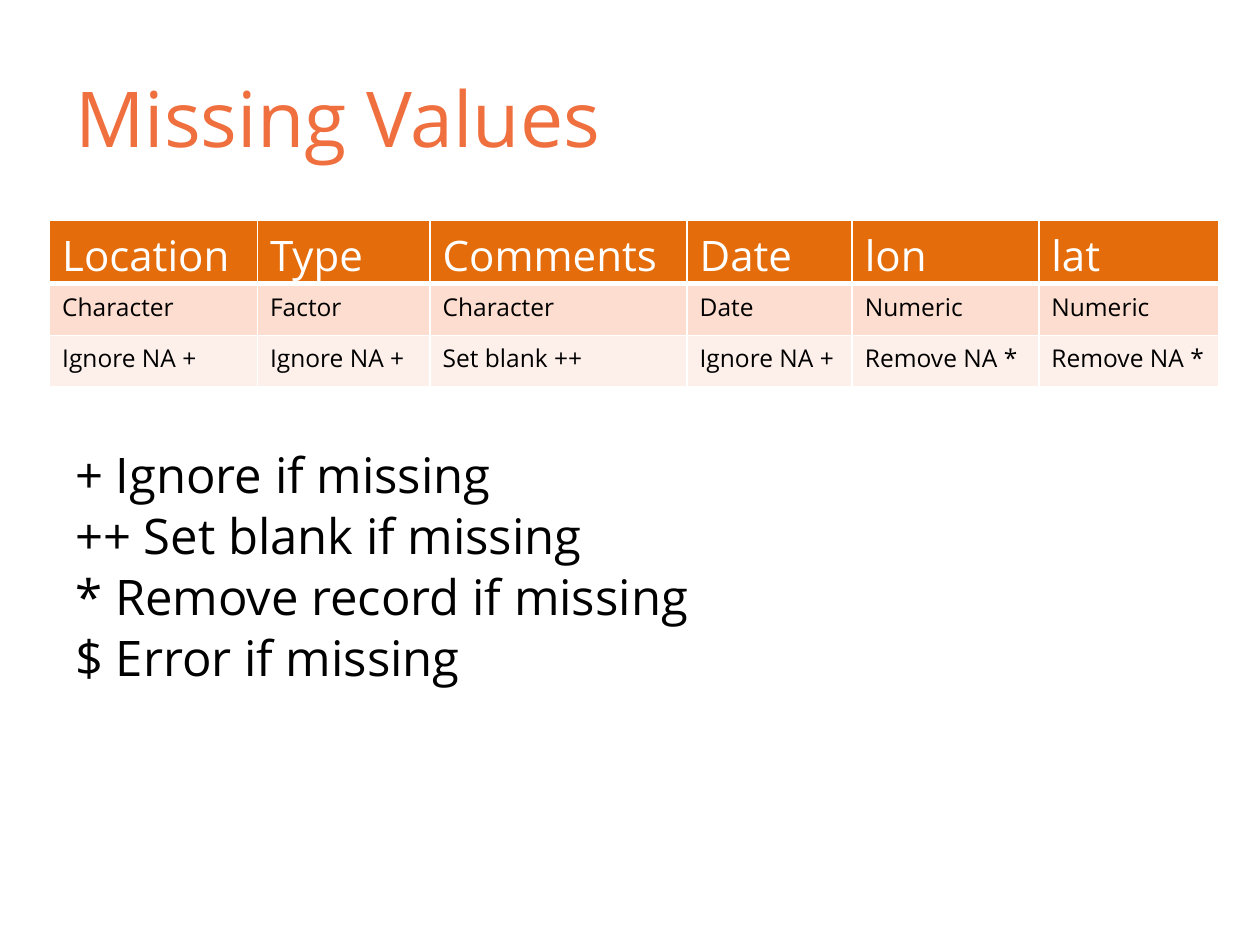
from dataclasses import dataclass

from lxml import etree
from pptx import Presentation
from pptx.dml.color import RGBColor
from pptx.enum.text import MSO_ANCHOR
from pptx.oxml.ns import qn
from pptx.slide import Slide
from pptx.util import Cm, Pt

TOP, MIDDLE = MSO_ANCHOR.TOP, MSO_ANCHOR.MIDDLE


@dataclass(frozen=True)
class Theme:
    font: str = "Open Sans"
    title_size: int = 44
    header_size: int = 24
    cell_size: int = 14
    legend_size: int = 28
    title: str = "EF6F3E"
    ink: str = "000000"
    white: str = "FFFFFF"
    header_fill: str = "E46C0A"
    type_fill: str = "FCDDCF"
    rule_fill: str = "FDEFE9"


@dataclass(frozen=True)
class TextBlock:
    lines: tuple[str, ...]
    left: float
    top: float
    width: float
    height: float
    size: int
    color: str
    anchor: MSO_ANCHOR = TOP
    line_spacing: float = 1.0
    gap: float = 0


@dataclass(frozen=True)
class TableRow:
    texts: tuple[str, ...]
    size: int
    color: str
    fill: str
    top_line: float = 1
    bottom_line: float = 1


THEME = Theme()

TITLE = TextBlock(("Missing Values",), 1.27, 0.76, 22.86, 3.18,
                  THEME.title_size, THEME.title, MIDDLE)
LEGEND = TextBlock(
    ("+ Ignore if missing", "++ Set blank if missing",
     "* Remove record if missing", "$ Error if missing"),
    1.27, 8.92, 16.15, 8.1, THEME.legend_size, THEME.ink,
    line_spacing=0.95, gap=3)

COLUMN_WIDTHS = (4.19, 3.48, 5.18, 3.33, 3.76, 3.63)
ROW_HEIGHT = 1.04
ROWS = (
    TableRow(("Location", "Type", "Comments", "Date", "lon", "lat"),
             THEME.header_size, THEME.white, THEME.header_fill, bottom_line=3),
    TableRow(("Character", "Factor", "Character", "Date", "Numeric", "Numeric"),
             THEME.cell_size, THEME.ink, THEME.type_fill, top_line=3),
    TableRow(("Ignore NA +", "Ignore NA +", "Set blank ++",
              "Ignore NA +", "Remove NA *", "Remove NA *"),
             THEME.cell_size, THEME.ink, THEME.rule_fill),
)


def add_span(para, text: str, size: int, color: str) -> None:
    span = para.add_run()
    span.text = text
    span.font.name = THEME.font
    span.font.size = Pt(size)
    span.font.bold = False
    span.font.color.rgb = RGBColor.from_string(color)


def add_text(page: Slide, block: TextBlock) -> None:
    box = page.shapes.add_textbox(Cm(block.left), Cm(block.top),
                                  Cm(block.width), Cm(block.height))
    frame = box.text_frame
    frame.word_wrap = True
    frame.vertical_anchor = block.anchor
    for index, line in enumerate(block.lines):
        para = frame.add_paragraph() if index else frame.paragraphs[0]
        para.line_spacing = block.line_spacing
        para.space_before = Pt(block.gap if index else 0)
        add_span(para, line, block.size, block.color)


def add_borders(cell, row: TableRow) -> None:
    properties = cell._tc.get_or_add_tcPr()
    widths = {"a:lnL": 1, "a:lnR": 1,
              "a:lnT": row.top_line, "a:lnB": row.bottom_line}
    for tag, width in widths.items():
        line = etree.SubElement(properties, qn(tag), w=str(Pt(width)))
        fill = etree.SubElement(line, qn("a:solidFill"))
        etree.SubElement(fill, qn("a:srgbClr"), val=THEME.white)


def add_variable_table(page: Slide, left: float, top: float) -> None:
    table = page.shapes.add_table(
        len(ROWS), len(COLUMN_WIDTHS), Cm(left), Cm(top),
        Cm(sum(COLUMN_WIDTHS)), Cm(ROW_HEIGHT * len(ROWS))).table
    for column, width in zip(table.columns, COLUMN_WIDTHS):
        column.width = Cm(width)
    for table_row, row in zip(table.rows, ROWS):
        table_row.height = Cm(ROW_HEIGHT)
        for cell, text in zip(table_row.cells, row.texts):
            add_borders(cell, row)
            cell.fill.solid()
            cell.fill.fore_color.rgb = RGBColor.from_string(row.fill)
            add_span(cell.text_frame.paragraphs[0], text, row.size, row.color)


def main() -> None:
    deck = Presentation()
    deck.slide_width, deck.slide_height = Cm(25.4), Cm(19.05)
    page = deck.slides.add_slide(deck.slide_layouts[6])
    add_text(page, TITLE)
    add_variable_table(page, 1, 4.45)
    add_text(page, LEGEND)
    deck.save("out.pptx")


if __name__ == "__main__":
    main()
